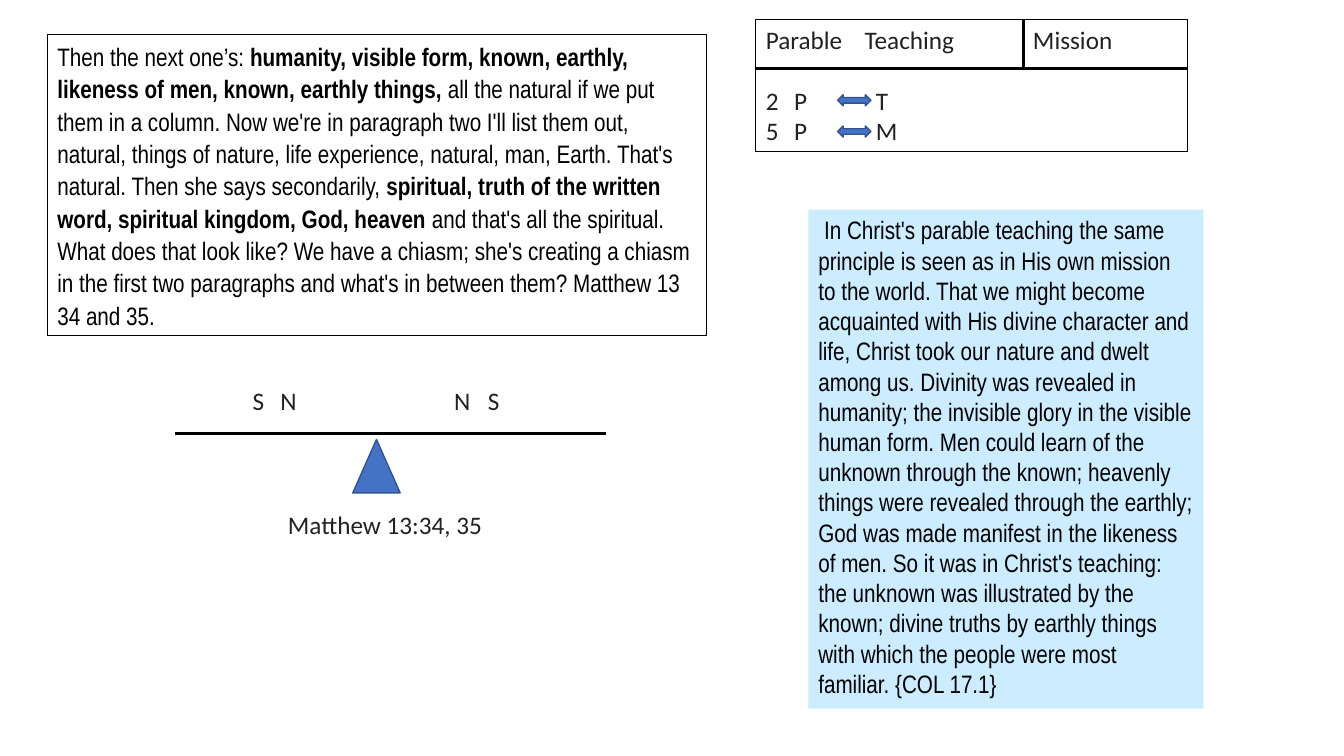
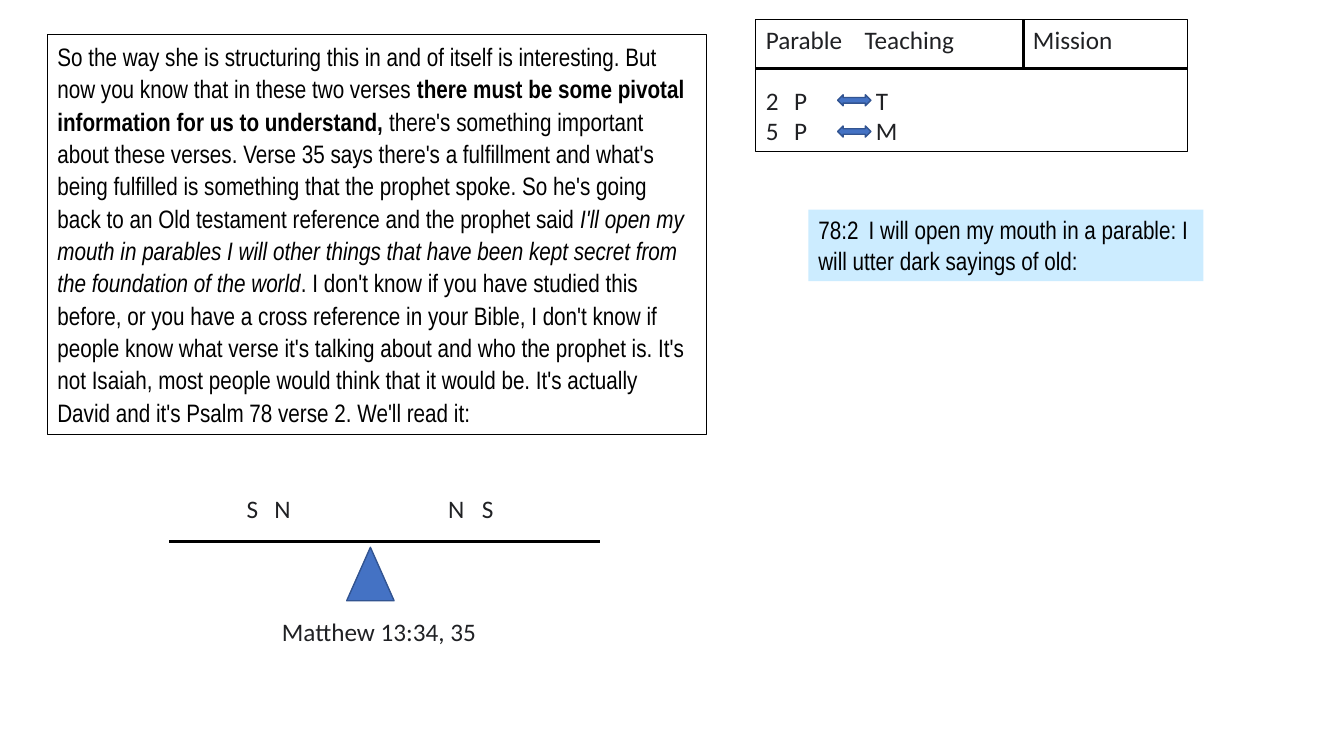
from lxml.etree import SubElement
from pptx import Presentation
from pptx.dml.color import RGBColor
from pptx.enum.shapes import MSO_CONNECTOR as Connector, MSO_SHAPE as Preset
from pptx.oxml.ns import qn
from pptx.util import Inches, Pt

COLUMNS, ROWS = 160, 90
COLORS = {
    "ink": "000000",
    "soft_ink": "202124",
    "paper": "FFFFFF",
    "quote": "CCECFF",
    "accent": "4472C4",
    "accent_edge": "325491",
}
PLAIN, BOLD, ITALIC = "plain", "bold", "italic"


class Deck:
    narrow_font = "Arial Narrow"
    label_font = "Calibri"
    text_size = Pt(18)

    def __init__(self):
        self.presentation = Presentation()
        self.presentation.slide_width = Inches(13.33)
        self.presentation.slide_height = Inches(7.5)
        self.slide = None

    def new_slide(self):
        self.slide = self.presentation.slides.add_slide(self.presentation.slide_layouts[6])

    def across(self, columns):
        return round(self.presentation.slide_width * columns / COLUMNS)

    def down(self, rows):
        return round(self.presentation.slide_height * rows / ROWS)

    def place(self, left, top, width, height):
        return self.across(left), self.down(top), self.across(width), self.down(height)

    def color(self, name):
        return RGBColor.from_string(COLORS[name])

    def paint(self, shape, fill=None, edge=None, weight=0.75):
        if fill:
            shape.fill.solid()
            shape.fill.fore_color.rgb = self.color(fill)
        if edge:
            shape.line.color.rgb = self.color(edge)
            shape.line.width = Pt(weight)

    def text_box(self, area, fill=None, edge=None):
        shape = self.slide.shapes.add_textbox(*self.place(*area))
        shape.text_frame.word_wrap = True
        self.paint(shape, fill, edge)
        return shape.text_frame

    def set_text(self, paragraph, runs, font, color, tabs=()):
        if tabs:
            tab_list = SubElement(paragraph._p.get_or_add_pPr(), qn("a:tabLst"))
            for position in tabs:
                SubElement(tab_list, qn("a:tab"), pos=str(self.across(position)), algn="l")
        paragraph.font.name = font
        paragraph.font.size = self.text_size
        paragraph.font.color.rgb = self.color(color)
        for text, style in runs:
            run = paragraph.add_run()
            run.text = text
            if style == BOLD:
                run.font.bold = True
            elif style == ITALIC:
                run.font.italic = True

    def label(self, paragraph, text, tabs=()):
        self.set_text(paragraph, [(text, PLAIN)], self.label_font, "soft_ink", tabs)

    def passage(self, height, runs):
        paragraph = self.text_box((5.64, 4.08, 78.48, height), "paper", "ink").paragraphs[0]
        paragraph.line_spacing = 1.07
        self.set_text(paragraph, runs, self.narrow_font, "ink")

    def quote(self, height, text):
        frame = self.text_box((96.24, 24.96, 47.04, height), "quote")
        self.set_text(frame.paragraphs[0], [(text, PLAIN)], self.narrow_font, "ink")

    def line(self, left, top, right, bottom):
        connector = self.slide.shapes.add_connector(
            Connector.STRAIGHT,
            self.across(left), self.down(top), self.across(right), self.down(bottom))
        self.paint(connector, edge="ink", weight=2.25)
        SubElement(connector._element.spPr, qn("a:effectLst"))

    def figure(self, preset, area):
        shape = self.slide.shapes.add_shape(preset, *self.place(*area))
        shape.shadow.inherit = False
        self.paint(shape, "accent", "accent_edge", 1)

    def parable_card(self):
        left, top, width, height = 90, 2.28, 51.36, 15.72
        rule = top + 5.88
        frame = self.text_box((left, top, width, height), edge="ink")
        self.label(frame.paragraphs[0], "Parable\tTeaching\tMission", (11.76, 31.8))
        for index, text in enumerate(("2\tP\tT", "5\tP\tM")):
            paragraph = frame.add_paragraph()
            self.label(paragraph, text, (3.36, 13.1))
            if index == 0:
                paragraph.space_before = Pt(22)
            self.figure(Preset.LEFT_RIGHT_ARROW, (99.72, 11.28 + 3.72 * index, 3.96, 1.32))
        self.line(121.8, top, 121.8, rule)
        self.line(left, rule, left + width, rule)

    def balance(self, left, top):
        sides = self.text_box((left, top, 51.36, 4.8))
        self.label(sides.paragraphs[0], "\tS\tN\tN\tS", (9.7, 13, 33.7, 37.7))
        beam = top + 6.36
        self.line(left + 1.65, beam, left + 52.95, beam)
        self.figure(Preset.ISOSCELES_TRIANGLE, (left + 22.8, beam + 0.72, 5.64, 6.36))
        verse = self.text_box((left + 13.9, top + 14.76, 26.76, 4.8))
        self.label(verse.paragraphs[0], "Matthew 13:34, 35")


PAGES = [
    {
        "passage": (35.88, [
            ("Then the next one’s: ", PLAIN),
            ("humanity, visible form, known, earthly, likeness of men, known, "
             "earthly things,", BOLD),
            (" all the natural if we put them in a column. Now we're in paragraph two "
             "I'll list them out, natural, things of nature, life experience, natural, "
             "man, Earth. That's natural. Then she says secondarily, ", PLAIN),
            ("spiritual, truth of the written word, spiritual kingdom, God, heaven ", BOLD),
            ("and that's all the spiritual. What does that look like? We have a chiasm; "
             "she's creating a chiasm in the first two paragraphs and what's in between "
             "them? Matthew 13 34 and 35.", PLAIN),
        ]),
        "quote": (59.4, (
            " In Christ's parable teaching the same principle is seen as in His own "
            "mission to the world. That we might become acquainted with His divine "
            "character and life, Christ took our nature and dwelt among us. Divinity was "
            "revealed in humanity; the invisible glory in the visible human form. Men "
            "could learn of the unknown through the known; heavenly things were revealed "
            "through the earthly; God was made manifest in the likeness of men. So it was "
            "in Christ's teaching: the unknown was illustrated by the known; divine truths "
            "by earthly things with which the people were most familiar. {COL 17.1}")),
        "balance": (19.2, 45.24),
    },
    {
        "passage": (47.64, [
            ("So the way she is structuring this in and of itself is interesting. But now "
             "you know that in these two verses ", PLAIN),
            ("there must be some pivotal information for us to understand,", BOLD),
            (" there's something important about these verses. Verse 35 says there's a "
             "fulfillment and what's being fulfilled is something that the prophet spoke. "
             "So he's going back to an Old testament reference and the prophet said", PLAIN),
            (" I'll open my mouth in parables I will other things that have been kept "
             "secret from the foundation of the world", ITALIC),
            (". I don't know if you have studied this before, or you have a cross reference "
             "in your Bible, I don't know if people know what verse it's talking about and "
             "who the prophet is. It's not Isaiah, most people would think that it would "
             "be. It's actually David and it's Psalm 78 verse 2. We'll read it:", PLAIN),
        ]),
        "quote": (8.52, "78:2\tI will open my mouth in a parable: "
                        "I will utter dark sayings of old:"),
        "balance": (18.48, 58.08),
    },
]


def main():
    deck = Deck()
    for page in PAGES:
        deck.new_slide()
        deck.parable_card()
        deck.passage(*page["passage"])
        deck.quote(*page["quote"])
        deck.balance(*page["balance"])
    deck.presentation.save("out.pptx")


if __name__ == "__main__":
    main()
